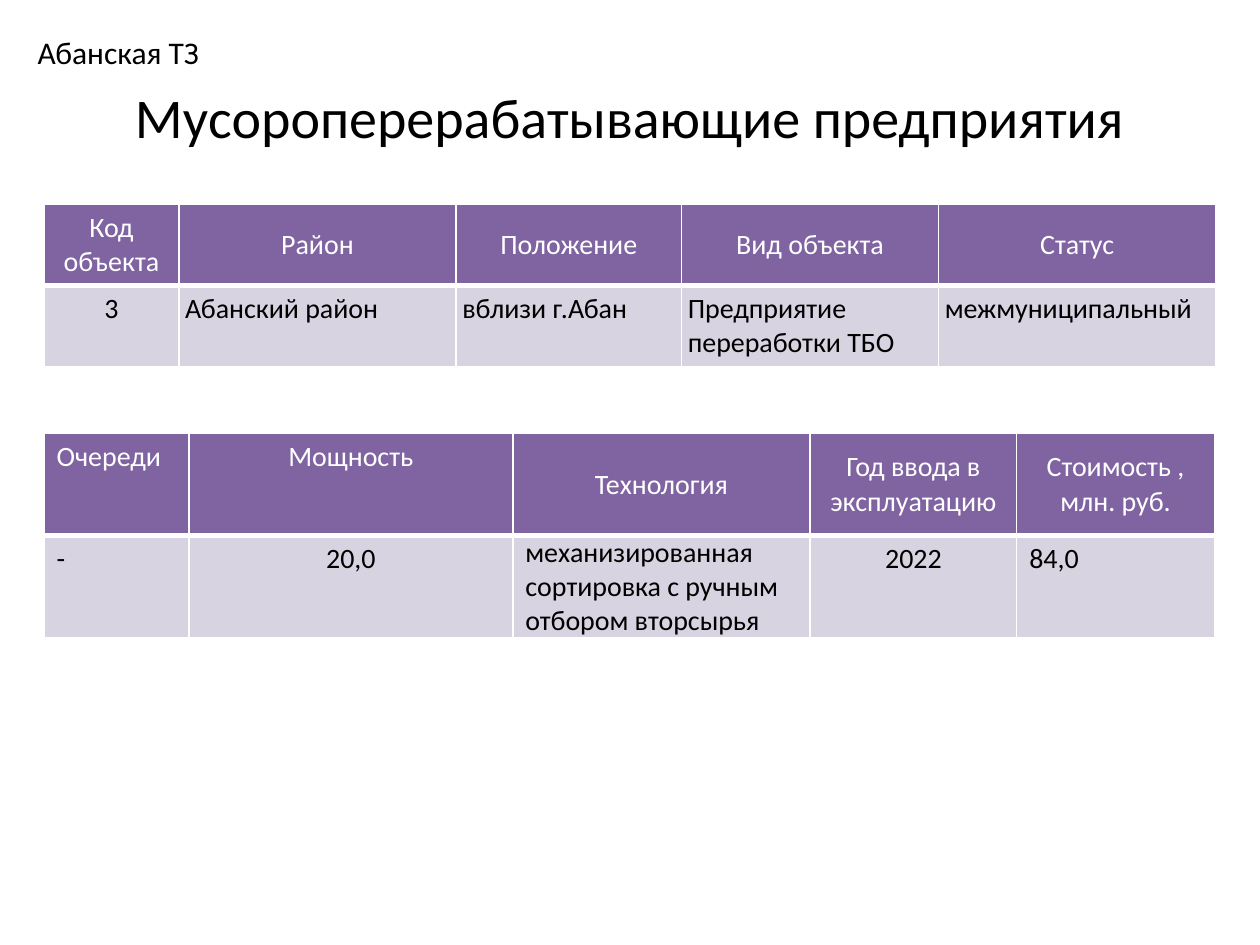
from dataclasses import dataclass

from lxml.etree import SubElement
from pptx import Presentation
from pptx.dml.color import RGBColor
from pptx.enum.text import MSO_ANCHOR as Anchor, MSO_AUTO_SIZE as AutoSize, PP_ALIGN as Align
from pptx.oxml.ns import qn
from pptx.util import Inches, Pt

SLIDE_WIDTH, SLIDE_HEIGHT = Inches(10), Inches(7.5)
FONT = "Calibri"
COLORS = {"text": "000000", "header": "8064A2", "header_text": "FFFFFF",
          "body": "D8D3E0", "grid": "FFFFFF"}


@dataclass(frozen=True)
class Entry:
    text: str
    align: Align = Align.LEFT
    anchor: Anchor = Anchor.TOP
    padding: tuple[float, float] | None = None  # side and top/bottom, inches


@dataclass(frozen=True)
class Grid:
    """A table whose lengths are percentages of the slide's size."""
    top: float
    columns: tuple[float, ...]
    row_height: float
    header: tuple[Entry, ...]
    body: tuple[Entry, ...]
    padding: tuple[float, float] = (0.1, 0.05)
    left: float = 3.5


def heading(text: str) -> Entry:
    return Entry(text, Align.CENTER, Anchor.MIDDLE)


def centered(text: str) -> Entry:
    return Entry(text, Align.CENTER)


FACILITY = Grid(
    top=21.6, columns=(10.7, 22, 17.9, 20.4, 22), row_height=8.53, padding=(0.05, 0.05),
    header=tuple(map(heading, ("Код объекта", "Район", "Положение", "Вид объекта", "Статус"))),
    body=(centered("3"), Entry("Абанский район"), Entry("вблизи г.Абан"),
          Entry("Предприятие переработки ТБО"), Entry("межмуниципальный")),
)
CAPACITY = Grid(
    top=45.87, columns=(11.5, 25.7, 23.6, 16.4, 15.7), row_height=10.8,
    header=(Entry("Очереди"), centered("Мощность"), heading("Технология"),
            heading("Год ввода в эксплуатацию"), heading("Стоимость , млн. руб.")),
    body=(Entry("-"), centered("20,0"),
          Entry("механизированная сортировка с ручным отбором вторсырья", padding=(0.1, 0)),
          centered("2022"), Entry("84,0")),
)


def across(percent: float) -> int:
    return round(SLIDE_WIDTH * percent / 100)


def down(percent: float) -> int:
    return round(SLIDE_HEIGHT * percent / 100)


def write(frame, text: str, size: float, color: str, align: Align = Align.LEFT) -> None:
    frame.text = text
    paragraph = frame.paragraphs[0]
    paragraph.alignment = align
    for run in paragraph.runs:
        run.font.name = FONT
        run.font.size = Pt(size)
        run.font.bold = False
        run.font.color.rgb = RGBColor.from_string(COLORS[color])


def add_borders(cell, bottom: float) -> None:
    """Must run before the fill is set: the schema wants lines first."""
    properties = cell._tc.get_or_add_tcPr()
    for side, width in (("L", 1), ("R", 1), ("T", 1), ("B", bottom)):
        line = SubElement(properties, qn(f"a:ln{side}"), w=str(Pt(width)))
        SubElement(SubElement(line, qn("a:solidFill")), qn("a:srgbClr"), val=COLORS["grid"])


def fill_cell(cell, entry: Entry, grid: Grid, is_header: bool) -> None:
    side, vertical = entry.padding or grid.padding
    cell.margin_left = cell.margin_right = Inches(side)
    cell.margin_top = cell.margin_bottom = Inches(vertical)
    cell.vertical_anchor = entry.anchor
    add_borders(cell, bottom=3 if is_header else 1)
    cell.fill.solid()
    cell.fill.fore_color.rgb = RGBColor.from_string(COLORS["header" if is_header else "body"])
    write(cell.text_frame, entry.text, 16, "header_text" if is_header else "text", entry.align)


def add_grid(slide, grid: Grid) -> None:
    rows = (grid.header, grid.body)
    table = slide.shapes.add_table(
        len(rows), len(grid.columns), across(grid.left), down(grid.top),
        across(sum(grid.columns)), down(grid.row_height * len(rows))).table
    for column, width in zip(table.columns, grid.columns):
        column.width = across(width)
    for row_index, entries in enumerate(rows):
        for column_index, entry in enumerate(entries):
            fill_cell(table.cell(row_index, column_index), entry, grid, row_index == 0)


def add_zone_label(slide, text: str) -> None:
    label = slide.shapes.add_textbox(across(2), down(2.8), across(15), down(5.33))
    label.text_frame.word_wrap = False
    label.text_frame.auto_size = AutoSize.SHAPE_TO_FIT_TEXT
    write(label.text_frame, text, 18, "text")


def set_title(slide, text: str) -> None:
    title = slide.shapes.title
    title.left, title.top = across(5), down(4)
    title.width, title.height = across(90), down(16.67)
    title.text_frame.vertical_anchor = Anchor.MIDDLE
    write(title.text_frame, text, 32, "text", Align.CENTER)


def main() -> None:
    deck = Presentation()
    deck.slide_width, deck.slide_height = SLIDE_WIDTH, SLIDE_HEIGHT
    slide = deck.slides.add_slide(deck.slide_layouts.get_by_name("Title Only"))
    set_title(slide, "Мусороперерабатывающие предприятия")
    for grid in (FACILITY, CAPACITY):
        add_grid(slide, grid)
    add_zone_label(slide, "Абанская ТЗ")
    deck.save("out.pptx")


if __name__ == "__main__":
    main()
